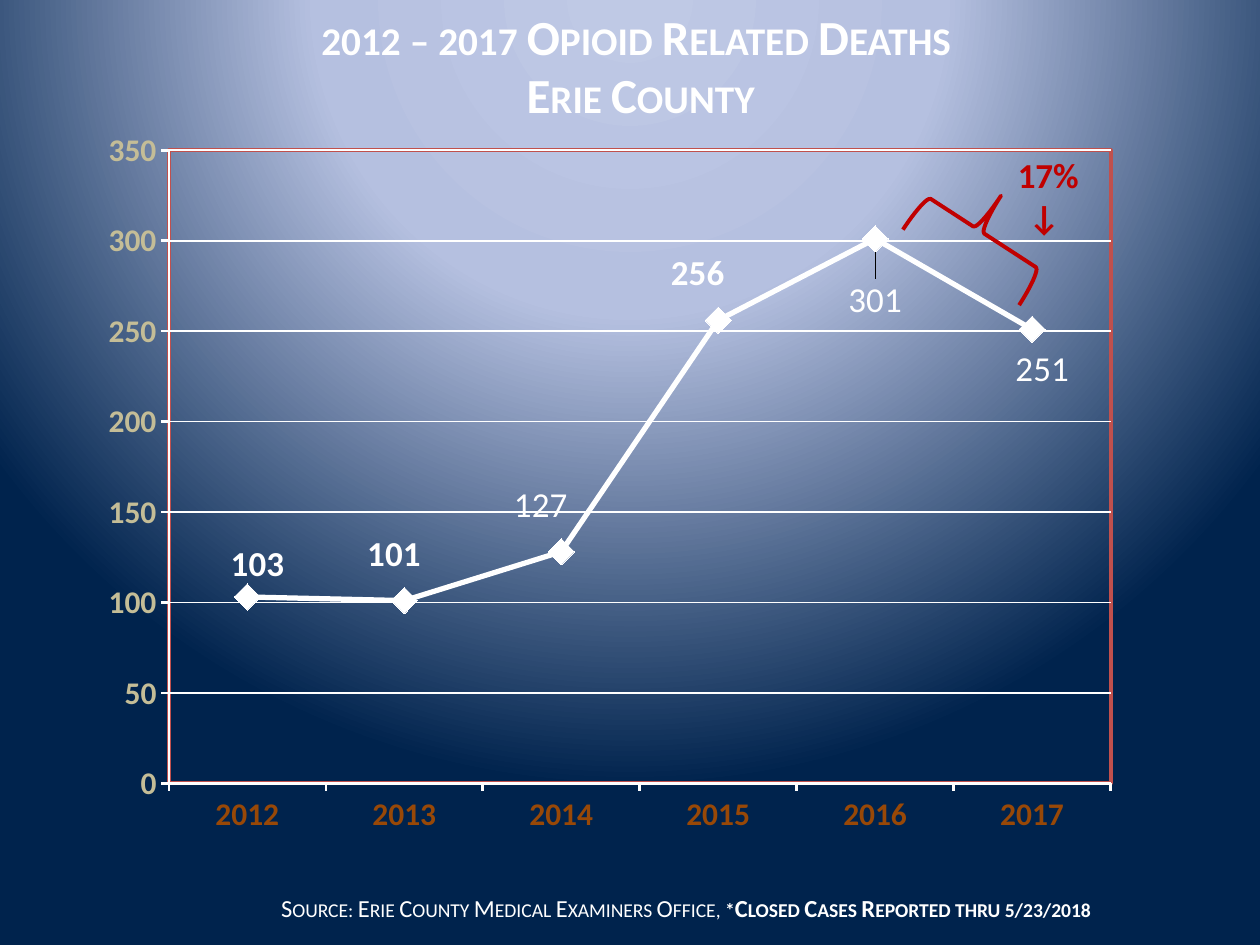
from lxml import etree
from pptx import Presentation
from pptx.chart.data import CategoryChartData
from pptx.dml.color import RGBColor
from pptx.enum.chart import XL_CHART_TYPE, XL_LABEL_POSITION, XL_MARKER_STYLE, XL_TICK_MARK
from pptx.enum.shapes import MSO_SHAPE
from pptx.enum.text import MSO_ANCHOR, MSO_AUTO_SIZE, PP_ALIGN
from pptx.oxml import parse_xml
from pptx.oxml.ns import nsdecls, qn
from pptx.util import Inches, Pt

ABOVE, BELOW = XL_LABEL_POSITION.ABOVE, XL_LABEL_POSITION.BELOW
CENTER = PP_ALIGN.CENTER
FONT = "Calibri"
COLORS = {"white": "FFFFFF", "red": "C00000", "frame": "C0504D",
          "years": "984807", "counts": "C4BD97"}


def format_font(font, size, color, bold=False):
    font.name = FONT
    font.size = Pt(size)
    font.bold = bold
    font.color.rgb = RGBColor.from_string(COLORS[color])


def add_text(paragraphs, box, size, color="white", small_caps=False,
             anchor=MSO_ANCHOR.TOP, wrap=True, grow=False):
    """Each paragraph is a list of (text, bold) runs."""
    shape = slide.shapes.add_textbox(*map(Inches, box))
    frame = shape.text_frame
    frame.word_wrap = wrap
    frame.vertical_anchor = anchor
    frame.auto_size = MSO_AUTO_SIZE.SHAPE_TO_FIT_TEXT if grow else MSO_AUTO_SIZE.NONE
    for index, runs in enumerate(paragraphs):
        paragraph = frame.add_paragraph() if index else frame.paragraphs[0]
        paragraph.alignment = CENTER
        for text, bold in runs:
            if text == "\n":
                paragraph.add_line_break()
                continue
            run = paragraph.add_run()
            run.text = text
            format_font(run.font, size, color, bold)
            if small_caps:
                run._r.get_or_add_rPr().set("cap", "small")


presentation = Presentation()
presentation.slide_width, presentation.slide_height = Inches(10), Inches(7.5)
slide = presentation.slides.add_slide(presentation.slide_layouts[6])

# Background: circular gradient centred above the slide
slide.background.fill.gradient()
gradient = slide.background._cSld.find(".//" + qn("a:gradFill"))
for child in list(gradient):
    gradient.remove(child)
stops = etree.SubElement(gradient, qn("a:gsLst"))
for position, color in ((0, "BFC9E5"), (40, "B5C0E0"), (100, "00234D")):
    stop = etree.SubElement(stops, qn("a:gs"), pos=str(position * 1000))
    etree.SubElement(stop, qn("a:srgbClr"), val=color)
circle = etree.SubElement(gradient, qn("a:path"))
circle.set("path", "circle")
etree.SubElement(circle, qn("a:fillToRect"), l="50000", t="-80000", r="50000", b="180000")

# Line chart
chart_data = CategoryChartData()
chart_data.categories = ["2012", "2013", "2014", "2015", "2016", "2017"]
chart_data.add_series("Series 1", (103, 101, 128, 256, 301, 251))
chart = slide.shapes.add_chart(
    XL_CHART_TYPE.LINE_MARKERS_STACKED, Inches(0.69), Inches(1.04),
    Inches(8.14), Inches(5.64), chart_data).chart
chart.has_legend = chart.has_title = False
format_font(chart.font, 18, "white")
white = RGBColor.from_string(COLORS["white"])

# Axes
for axis, color in ((chart.category_axis, "years"), (chart.value_axis, "counts")):
    format_font(axis.tick_labels.font, 18, color, bold=True)
    axis.major_tick_mark = XL_TICK_MARK.OUTSIDE
    axis.minor_tick_mark = XL_TICK_MARK.NONE
    axis.format.line.color.rgb = white
    axis.format.line.width = Pt(1.5)
chart.value_axis.minimum_scale, chart.value_axis.maximum_scale = 0, 350
chart.value_axis.major_unit = 50
chart.value_axis.has_major_gridlines = True
gridlines = chart.value_axis.major_gridlines.format.line
gridlines.color.rgb = white
gridlines.width = Pt(1)

# Plot area: fixed place and red frame
plot_area = chart._chartSpace.chart.plotArea
for old_layout in plot_area.findall(qn("c:layout")):
    plot_area.remove(old_layout)
plot_area.insert(0, parse_xml(
    f'<c:layout {nsdecls("c")}><c:manualLayout><c:layoutTarget val="inner"/>'
    '<c:xMode val="edge"/><c:yMode val="edge"/><c:x val="0.08"/><c:y val="0.027"/>'
    '<c:w val="0.92"/><c:h val="0.891"/></c:manualLayout></c:layout>'))
plot_area.append(parse_xml(
    f'<c:spPr {nsdecls("c", "a")}><a:noFill/><a:ln w="{Pt(2.25)}"><a:solidFill>'
    f'<a:srgbClr val="{COLORS["frame"]}"/></a:solidFill></a:ln></c:spPr>'))

# Series line and markers
plot = chart.plots[0]
plot.vary_by_categories = False
series = plot.series[0]
series.smooth = False
series.format.line.color.rgb = white
series.format.line.width = Pt(3)
series.marker.style = XL_MARKER_STYLE.DIAMOND
series.marker.size = 15
series.marker.format.fill.solid()
series.marker.format.fill.fore_color.rgb = white
series.marker.format.line.fill.background()

# Point labels: own text, bold, side, shift as a share of the chart
labels = [(None, True, ABOVE, 0.01, 0.01), (None, True, ABOVE, -0.01, -0.01),
          ("127", False, ABOVE, -0.02, -0.01), ("256", True, ABOVE, -0.02, -0.01),
          ("301", False, BELOW, 0, 0.03), ("251", False, BELOW, 0.01, 0)]
series.data_labels.show_value = True
format_font(series.data_labels.font, 20, "white", bold=True)
for index, (text, bold, side, shift_x, shift_y) in enumerate(labels):
    label = series.points[index].data_label
    if text:
        run = label.text_frame.paragraphs[0].add_run()
        run.text = text
        format_font(run.font, 20, "white", bold)
    else:
        format_font(label.font, 20, "white", bold)
    label.position = side
    label._dLbl.insert(1, parse_xml(
        f'<c:layout {nsdecls("c")}><c:manualLayout><c:x val="{shift_x}"/>'
        f'<c:y val="{shift_y}"/></c:manualLayout></c:layout>'))

# Title and source
add_text([[("2012 – 2017 Opioid Related Deaths ", True)], [("Erie County", True)]],
         (1.99, 0, 6.19, 1.04), 28, small_caps=True, grow=True)
add_text([[("Source: Erie County Medical Examiners Office, ", False),
           ("*Closed Cases Reported thru 5/23/2018", True)]],
         (1.48, 6.99, 7.93, 0.42), 14, small_caps=True, anchor=MSO_ANCHOR.MIDDLE)

# Brace and percentage of the drop from 2016 to 2017
brace = slide.shapes.add_shape(MSO_SHAPE.RIGHT_BRACE, Inches(7.48), Inches(1.3),
                               Inches(0.65), Inches(1.1))
brace.rotation = 303
brace.adjustments[0], brace.adjustments[1] = 0.08, 0.46
brace.shadow.inherit = False
brace.fill.background()
brace.line.color.rgb = RGBColor.from_string(COLORS["red"])
brace.line.width = Pt(2.25)
add_text([[("17%", True), ("\n", True), ("↓ ", True)]], (7.86, 1.17, 0.92, 0.44), 20,
         color="red", wrap=False, grow=True)

presentation.save("out.pptx")
